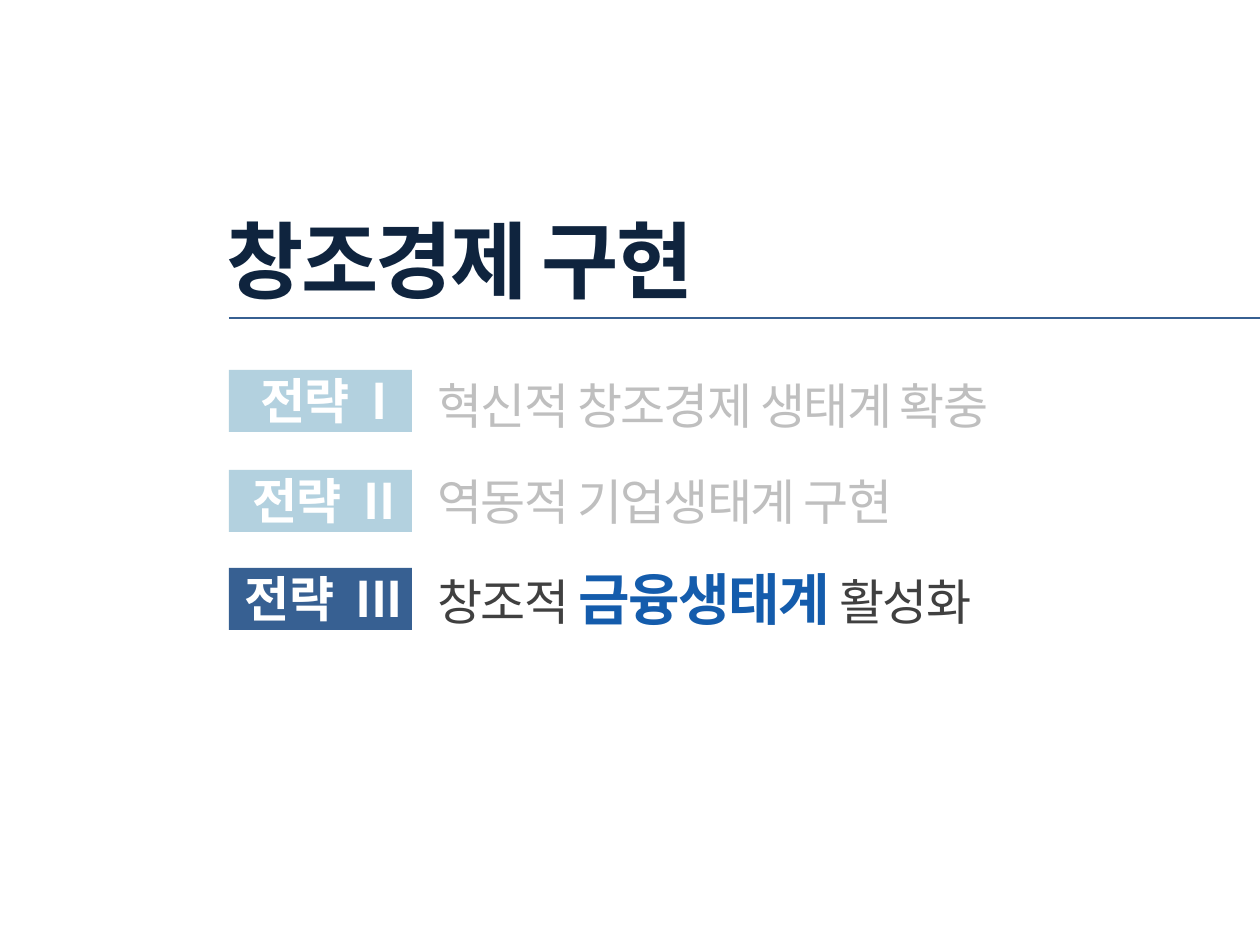
"""Build the agenda slide listing three strategies with the third highlighted."""
from pptx import Presentation, util as u
from pptx.dml.color import RGBColor
from pptx.enum import shapes, text
from pptx.oxml.ns import qn
from lxml import etree

FONT = "Noto Sans CJK KR"
PX = 914400 / 126


def box(*lengths):
    return [u.Emu(round(n * PX)) for n in lengths]


def add_run(p, words, size, color, bold, spacing):
    r = p.add_run()
    r.text = words
    r.font.size = u.Pt(size)
    r.font.bold = bold
    r.font.name = FONT
    r.font.color.rgb = RGBColor.from_string(color)
    rPr = r.font._element
    rPr.set("spc", str(round(spacing * 100)))
    etree.SubElement(rPr, qn("a:ea")).set("typeface", FONT)


prs = Presentation()
prs.slide_width, prs.slide_height = box(1260, 945)
s = prs.slides.add_slide(prs.slide_layouts[5])

title = s.shapes.title
title.left, title.top, title.width, title.height = box(62, 202, 796, 115)
tf = title.text_frame
tf.word_wrap = True
tf.auto_size = text.MSO_AUTO_SIZE.NONE
tf.vertical_anchor = text.MSO_ANCHOR.TOP
p = tf.paragraphs[0]
p.alignment = text.PP_ALIGN.CENTER
add_run(p, "창조경제 구현", 48, "0F243E", True, -1.5)

rule = s.shapes.add_connector(shapes.MSO_CONNECTOR.STRAIGHT, *box(229, 318, 1260, 318))
rule.line.color.rgb = RGBColor.from_string("376092")
rule.line.width = u.Pt(1.5)
etree.SubElement(rule._element.spPr, qn("a:effectLst"))

strategies = [
    ("I", 370, 369, 72, "B3D1DF", [("혁신적 창조경제 생태계 확충", 28, "BFBFBF", False)]),
    ("II", 470, 465, 72, "B3D1DF", [("역동적 기업생태계 구현", 28, "BFBFBF", False)]),
    ("III", 568, 558, 81, "376092", [("창조적 ", 28, "404040", False),
                                     ("금융생태계", 32, "145CAC", True),
                                     (" 활성화", 28, "404040", False)]),
]
for numeral, top, text_top, text_height, fill, runs in strategies:
    sp = s.shapes.add_shape(shapes.MSO_SHAPE.ROUNDED_RECTANGLE, *box(229, top, 183, 62))
    sp.adjustments[0] = 0
    sp.shadow.inherit = False
    sp.fill.solid()
    sp.fill.fore_color.rgb = RGBColor.from_string(fill)
    sp.line.fill.background()

    label = s.shapes.add_textbox(*box(222, top - 6, 204, 72))
    label.text_frame.word_wrap = True
    p = label.text_frame.paragraphs[0]
    p.alignment = text.PP_ALIGN.CENTER
    for words, spacing in (("전략", -0.4), (" ", 6), (numeral, -0.4)):
        add_run(p, words, 28, "FFFFFF", True, spacing)

    topic = s.shapes.add_textbox(*box(425, text_top, 645, text_height))
    topic.text_frame.word_wrap = True
    for words, size, color, bold in runs:
        add_run(topic.text_frame.paragraphs[0], words, size, color, bold, -0.9)

prs.save("out.pptx")
